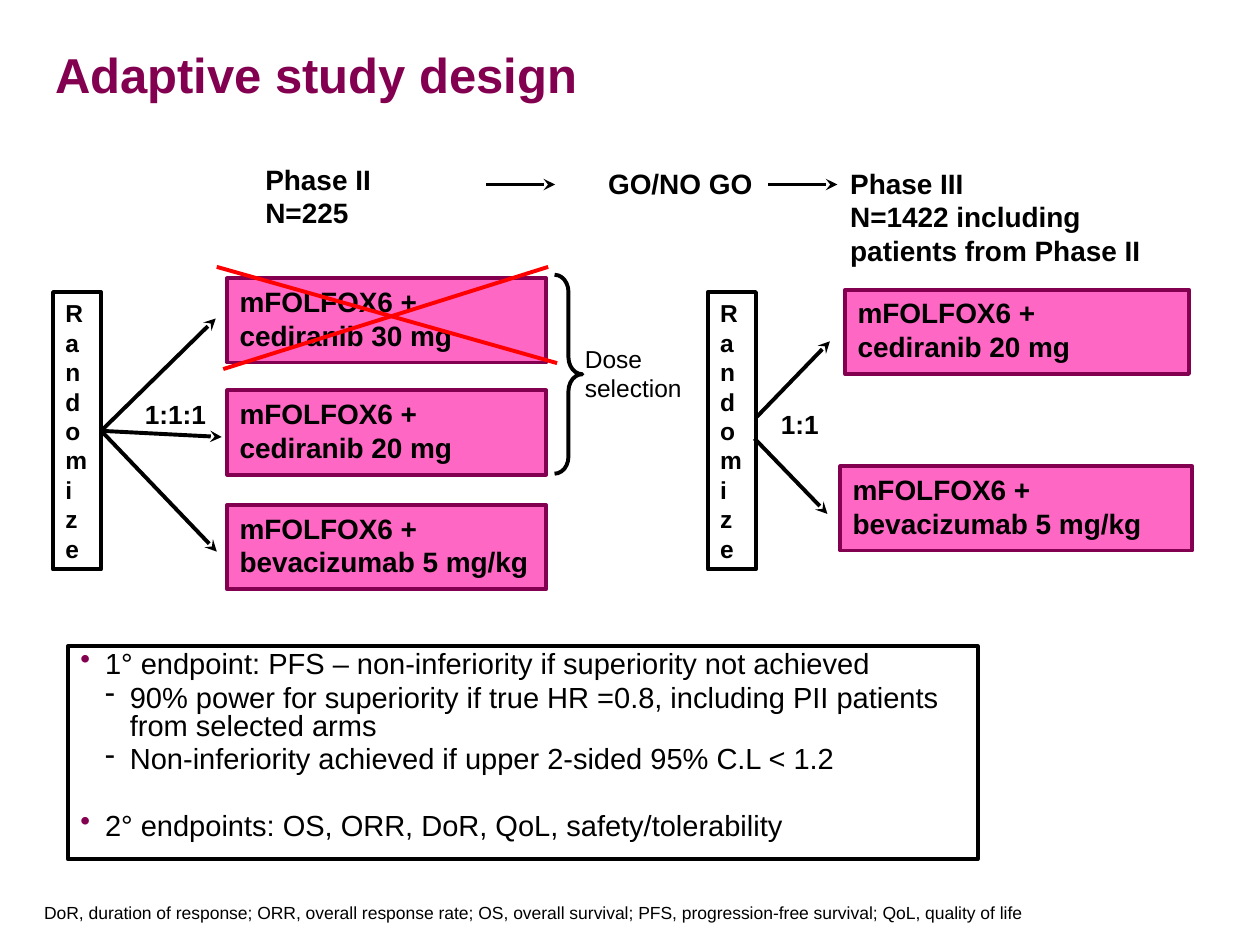
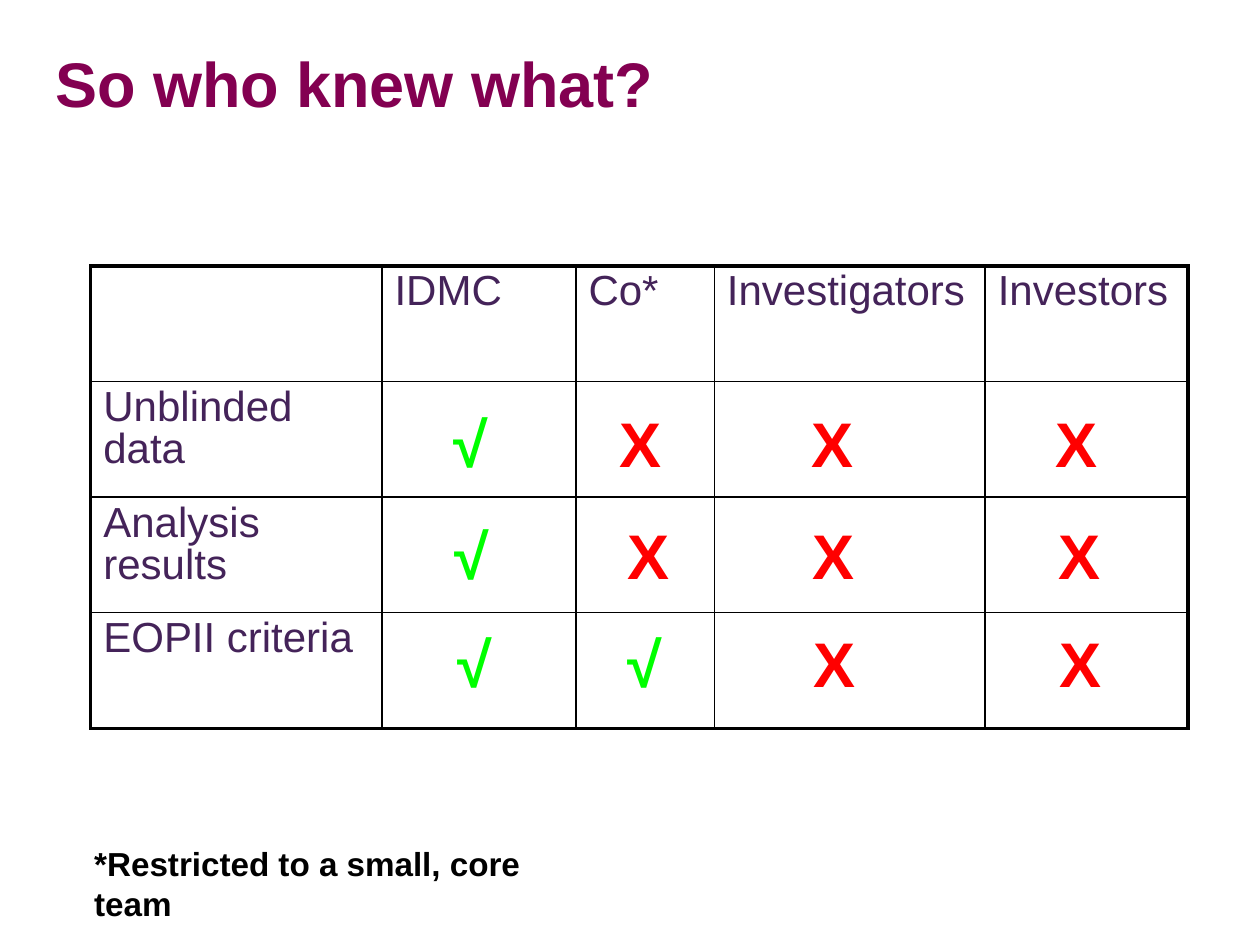
from dataclasses import dataclass

from lxml import etree
from pptx import Presentation
from pptx.dml.color import RGBColor
from pptx.enum.shapes import MSO_CONNECTOR, MSO_SHAPE
from pptx.enum.text import MSO_ANCHOR, PP_ALIGN
from pptx.oxml.ns import qn
from pptx.util import Cm, Pt

STRAIGHT = MSO_CONNECTOR.STRAIGHT
RECTANGLE = MSO_SHAPE.RECTANGLE
RIGHT_BRACE = MSO_SHAPE.RIGHT_BRACE
LEFT = PP_ALIGN.LEFT
TOP = MSO_ANCHOR.TOP
TITLE_ONLY = 5
RIGHT_SIDE = 3


@dataclass(frozen=True)
class Theme:
    font: str = "Arial"
    plum: str = "830051"
    pink: str = "FF67C5"
    violet: str = "442359"
    black: str = "000000"
    red: str = "FF0000"
    green: str = "00FF00"
    title: float = 28
    big_title: float = 36
    mark: float = 36
    table: float = 24
    note: float = 19
    endpoint: float = 16.6
    heading: float = 16
    ratio: float = 15
    label: float = 14
    footnote: float = 10
    rule: float = 2.25
    thin_rule: float = 1


@dataclass(frozen=True)
class Box:
    """A region in centimetres."""
    left: float
    top: float
    width: float
    height: float

    def inner(self, dx, dy, width, height):
        return Box(self.left + dx, self.top + dy, width, height)

    def point(self, dx, dy):
        return Cm(self.left + dx), Cm(self.top + dy)

    def lengths(self):
        return [Cm(v) for v in (self.left, self.top, self.width, self.height)]


THEME = Theme()
TITLE_BOX = Box(0.86, 0.76, 23.37, 1.42)
BAR_WIDTH, ARM_HEIGHT = 0.97, 1.7


# Shared helpers
def rgb(color):
    return RGBColor.from_string(color)


def style(paragraph, size, color=THEME.black, bold=False):
    paragraph.alignment = LEFT
    font = paragraph.font
    font.name, font.size, font.bold = THEME.font, Pt(size), bold
    font.color.rgb = rgb(color)


def write(frame, lines, size, color=THEME.black, bold=False, wrap=True):
    frame.word_wrap = wrap
    frame.vertical_anchor = TOP
    for i, line in enumerate(lines):
        paragraph = frame.paragraphs[0] if i == 0 else frame.add_paragraph()
        paragraph.text = line
        style(paragraph, size, color, bold)


def add_text(slide, box, lines, size, **options):
    label = slide.shapes.add_textbox(*box.lengths())
    write(label.text_frame, lines, size, **options)


def add_outline(slide, box, preset=RECTANGLE, fill=None, line=THEME.black):
    outline = slide.shapes.add_shape(preset, *box.lengths())
    outline.shadow.inherit = False
    if fill:
        outline.fill.solid()
        outline.fill.fore_color.rgb = rgb(fill)
    else:
        outline.fill.background()
    outline.line.color.rgb = rgb(line)
    outline.line.width = Pt(THEME.rule)
    return outline


def add_line(slide, start, end, color=THEME.black, arrow=True):
    line = slide.shapes.add_connector(STRAIGHT, *start, *end)
    line.line.color.rgb = rgb(color)
    line.line.width = Pt(THEME.rule)
    if arrow:
        etree.SubElement(line.line._get_or_add_ln(), qn("a:tailEnd"), type="stealth")
    etree.SubElement(line._element.spPr, qn("a:effectLst"))
    return line


def add_titled_slide(prs, title, size):
    slide = prs.slides.add_slide(prs.slide_layouts[TITLE_ONLY])
    holder = slide.shapes.title
    holder.left, holder.top, holder.width, holder.height = TITLE_BOX.lengths()
    write(holder.text_frame, [title], size, color=THEME.plum, bold=True)
    return slide


# Adaptive study design
def add_phase_headings(slide, box):
    headings = [
        (0, 0, 5.08, ["Phase II", "N=225"], True),
        (6.91, 0.08, 3.43, ["GO/NO GO"], False),
        (11.79, 0.08, 7.29, ["Phase III", "N=1422 including patients from Phase II"], True),
    ]
    for dx, dy, width, lines, wrap in headings:
        add_text(slide, box.inner(dx, dy, width, 0.85 * len(lines)), lines,
                 THEME.heading, bold=True, wrap=wrap)
    for dx in (4.7, 10.39):
        add_line(slide, box.point(dx, 0.57), box.point(dx + 1.39, 0.57))


def add_randomization(slide, box, ratio, ratio_at, arms, arrows):
    """Arms are (dx, dy, width, lines); an arrow without a start leaves mid-bar."""
    bar = add_outline(slide, box.inner(0, 0, BAR_WIDTH, box.height))
    write(bar.text_frame, list("Randomize"), THEME.label, bold=True)
    for dx, dy, width, lines in arms:
        arm = add_outline(slide, box.inner(dx, dy, width, ARM_HEIGHT),
                          fill=THEME.pink, line=THEME.plum)
        write(arm.text_frame, lines, THEME.heading, bold=True)
    for start, end in arrows:
        arrow = add_line(slide, box.point(*(start or (0, 0))), box.point(*end))
        if start is None:
            arrow.begin_connect(bar, RIGHT_SIDE)
    add_text(slide, box.inner(*ratio_at, 1.75, 0.89), [ratio], THEME.ratio,
             bold=True, wrap=False)


def add_dose_selection(slide, box):
    brace = add_outline(slide, box.inner(0, 0, 0.56, box.height), RIGHT_BRACE)
    brace.adjustments[0] = 0.61
    add_text(slide, box.inner(0.36, 1.27, 2.46, 1.45), ["Dose", "selection"],
             THEME.label, wrap=False)


def add_cross(slide, box):
    for start, end in (((0.13, 2.06), (6.68, 0)), ((0, 0), (box.width, box.height))):
        add_line(slide, box.point(*start), box.point(*end), THEME.red, arrow=False)


def add_bullet(paragraph, char, indent, color):
    props = paragraph._p.get_or_add_pPr()
    props.set("marL", str(Cm(indent)))
    props.set("indent", str(-Cm(0.5)))
    bullet_color = etree.SubElement(props, qn("a:buClr"))
    etree.SubElement(bullet_color, qn("a:srgbClr"), val=color)
    etree.SubElement(props, qn("a:buChar"), char=char)


def add_endpoints(slide, box):
    # Text, level, space before
    endpoints = [
        ("1° endpoint: PFS – non-inferiority if superiority not achieved", 0, 0),
        ("90% power for superiority if true HR =0.8, including PII patients "
         "from selected arms", 1, 3.3),
        ("Non-inferiority achieved if upper 2-sided 95% C.L < 1.2", 1, 3.3),
        ("2° endpoints: OS, ORR, DoR, QoL, safety/tolerability", 0, 22),
    ]
    bullets = [("•", 0.5, THEME.plum), ("-", 1, THEME.black)]
    frame = add_outline(slide, box).text_frame
    frame.word_wrap = True
    frame.vertical_anchor = TOP
    for i, (text, level, before) in enumerate(endpoints):
        paragraph = frame.add_paragraph() if i else frame.paragraphs[0]
        paragraph.text = text
        paragraph.level = level
        paragraph.line_spacing = 0.8
        paragraph.space_before = Pt(before)
        add_bullet(paragraph, *bullets[level])
        style(paragraph, THEME.endpoint)


def build_study_design(prs):
    slide = add_titled_slide(prs, "Adaptive study design", THEME.title)
    add_phase_headings(slide, Box(5.1, 3.15, 19.08, 2.3))
    partner = "mFOLFOX6 +"
    low_dose = [partner, "cediranib 20 mg"]
    control = [partner, "bevacizumab 5 mg/kg"]
    add_randomization(
        slide, Box(1.07, 5.89, 9.95, 5.59), "1:1:1", (1.6, 2.01),
        [(3.51, -0.28, 6.43, [partner, "cediranib 30 mg"]),
         (3.51, 1.98, 6.43, low_dose),
         (3.51, 4.29, 6.43, control)],
        [(None, (3.28, 0.53)), (None, (3.4, 2.92)), (None, (3.3, 5.23))])
    add_randomization(
        slide, Box(14.27, 5.89, 9.76, 5.59), "1:1", (1.22, 2.21),
        [(2.77, -0.05, 6.93, low_dose), (2.67, 3.51, 7.09, control)],
        [((0.99, 2.51), (2.46, 0.99)), ((0.94, 2.95), (2.41, 4.47))])
    add_dose_selection(slide, Box(11.18, 5.54, 2.82, 4.01))
    add_cross(slide, Box(4.37, 5.38, 6.86, 1.94))
    add_endpoints(slide, Box(1.37, 13.03, 18.34, 4.29))
    add_text(slide, Box(0.64, 18.06, 23.16, 0.69), [
        "DoR, duration of response; ORR, overall response rate; OS, overall survival; "
        "PFS, progression-free survival; QoL, quality of life"], THEME.footnote)


# So who knew what?
def add_cell_borders(cell, widths):
    props = cell._tc.get_or_add_tcPr()
    for i, (side, width) in enumerate(zip("LRTB", widths)):
        border = etree.Element(qn(f"a:ln{side}"), w=str(Pt(width)))
        fill = etree.SubElement(border, qn("a:solidFill"))
        etree.SubElement(fill, qn("a:srgbClr"), val=THEME.black)
        props.insert(i, border)


def add_knowledge_table(slide, box):
    rows = [
        ["", "IDMC", "Co*", "Investigators", "Investors"],
        ["Unblinded data"], ["Analysis results"], ["EOPII criteria"],
    ]
    column_widths = [5.87, 3.91, 2.79, 5.46, 4.09]
    last_row, last_column = len(rows) - 1, len(column_widths) - 1
    table = slide.shapes.add_table(len(rows), len(column_widths), *box.lengths()).table
    table.first_row = table.horz_banding = False
    for column, width in zip(table.columns, column_widths):
        column.width = Cm(width)
    for r, texts in enumerate(rows):
        table.rows[r].height = Cm(box.height / len(rows))
        for c in range(len(column_widths)):
            cell = table.cell(r, c)
            cell.fill.background()
            edges = (c == 0, c == last_column, r == 0, r == last_row)
            add_cell_borders(cell, [THEME.rule if edge else THEME.thin_rule
                                    for edge in edges])
            if c < len(texts) and texts[c]:
                paragraph = cell.text_frame.paragraphs[0]
                paragraph.text = texts[c]
                paragraph.line_spacing = 0.9
                style(paragraph, THEME.table, THEME.violet)


def add_marks(slide, box):
    # Row offset, marks, and their distances from the left of the table
    mark_rows = [
        (2.67, "√XXX", (7.06, 10.41, 14.27, 19.2)),
        (4.93, "√XXX", (7.09, 10.57, 14.3, 19.25)),
        (7.11, "√√XX", (7.14, 10.57, 14.33, 19.28)),
    ]
    for dy, marks, offsets in mark_rows:
        for mark, dx in zip(marks, offsets):
            color = THEME.green if mark == "√" else THEME.red
            add_text(slide, box.inner(dx, dy, 1.3, 1.78), [mark], THEME.mark,
                     color=color, bold=True, wrap=False)


def build_who_knew_what(prs):
    slide = add_titled_slide(prs, "So who knew what?", THEME.big_title)
    table_box = Box(1.83, 5.36, 22.12, 9.32)
    add_knowledge_table(slide, table_box)
    add_marks(slide, table_box)
    add_text(slide, Box(1.65, 16.87, 10.21, 1.07),
             ["*Restricted to a small, core team"], THEME.note, bold=True)


def main():
    prs = Presentation()
    prs.slide_width, prs.slide_height = Cm(25.4), Cm(19.05)
    build_study_design(prs)
    build_who_knew_what(prs)
    prs.save("out.pptx")


if __name__ == "__main__":
    main()
